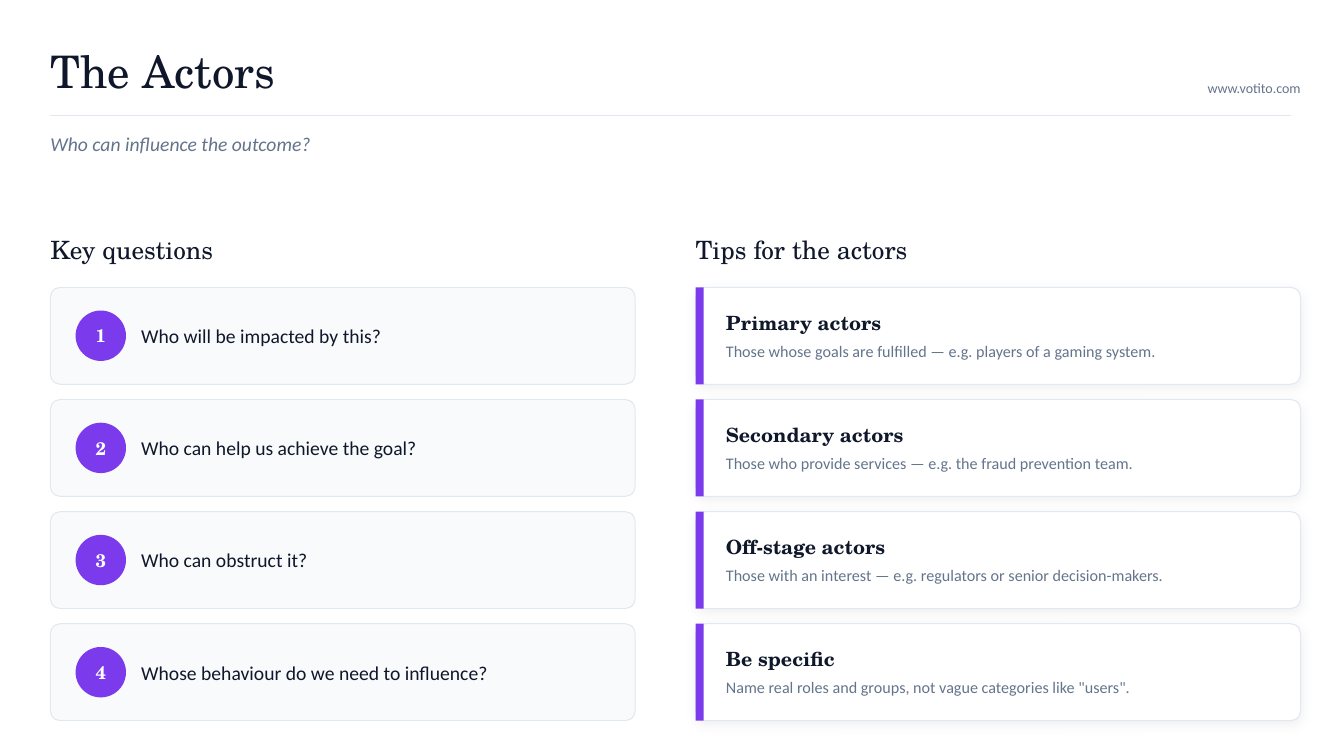
from lxml import etree
from pptx import Presentation
from pptx.dml.color import RGBColor
from pptx.enum.shapes import MSO_CONNECTOR, MSO_SHAPE
from pptx.enum.text import MSO_ANCHOR, PP_ALIGN
from pptx.oxml import parse_xml
from pptx.oxml.ns import qn
from pptx.util import Inches, Pt

RECT, ROUND, OVAL = MSO_SHAPE.RECTANGLE, MSO_SHAPE.ROUNDED_RECTANGLE, MSO_SHAPE.OVAL
LEFT, CENTER, RIGHT = PP_ALIGN.LEFT, PP_ALIGN.CENTER, PP_ALIGN.RIGHT
MIDDLE, STRAIGHT = MSO_ANCHOR.MIDDLE, MSO_CONNECTOR.STRAIGHT

TITLE = "The Actors"
SUBTITLE = "Who can influence the outcome?"
SITE = "www.votito.com"
QUESTIONS_HEADING = "Key questions"
QUESTIONS = [
    "Who will be impacted by this?",
    "Who can help us achieve the goal?",
    "Who can obstruct it?",
    "Whose behaviour do we need to influence?",
]
TIPS_HEADING = "Tips for the actors"
TIPS = [
    ("Primary actors", "Those whose goals are fulfilled — e.g. players of a gaming system."),
    ("Secondary actors", "Those who provide services — e.g. the fraud prevention team."),
    ("Off-stage actors", "Those with an interest — e.g. regulators or senior decision-makers."),
    ("Be specific", 'Name real roles and groups, not vague categories like "users".'),
]

SERIF, SANS = "TeX Gyre Schola", "Calibri"
INK, GREY, RULE, PANEL = "0F172A", "64748B", "E2E8F0", "F8FAFC"
WHITE, PURPLE = "FFFFFF", "7C3AED"

MARGIN, TIPS_X = 0.5, 6.9
QUESTION_W, TIP_W = 5.8, 6
TOP, BOTTOM, GAP = 2.85, 7.15, 0.15
PITCH = (BOTTOM + GAP - TOP) / len(QUESTIONS)
CARD_H = PITCH - GAP
RADIUS, BADGE, BAR = 0.1, 0.5, 0.08
SHADOW = ('<a:outerShdw xmlns:a="http://schemas.openxmlformats.org/drawingml/2006/main" '
          'blurRad="101600" dist="25400" dir="5400000" algn="bl" rotWithShape="0">'
          '<a:srgbClr val="000000"><a:alpha val="5000"/></a:srgbClr></a:outerShdw>')


def color(value):
    return RGBColor.from_string(value)


def write(sp, paragraphs, align=LEFT, space=0):
    tf = sp.text_frame
    tf.word_wrap = True
    tf.vertical_anchor = MIDDLE
    tf.margin_left = tf.margin_right = tf.margin_top = tf.margin_bottom = 0
    for i, runs in enumerate(paragraphs):
        p = tf.add_paragraph() if i else tf.paragraphs[0]
        p.alignment = align
        if i:
            p.space_before = Pt(space)
        for text, size, font, fill, bold, italic in runs:
            r = p.add_run()
            r.text = text
            r.font.size, r.font.name = Pt(size), font
            r.font.bold, r.font.italic = bold, italic
            r.font.color.rgb = color(fill)


def run(text, size, font, fill, bold=False, italic=False):
    return text, size, font, fill, bold, italic


def add_text(s, box, paragraphs, align=LEFT, space=0):
    sp = s.shapes.add_textbox(*map(Inches, box))
    write(sp, paragraphs, align, space)


def add_shape(s, kind, box, fill, line=None):
    sp = s.shapes.add_shape(kind, *map(Inches, box))
    sp.shadow.inherit = False
    sp.fill.solid()
    sp.fill.fore_color.rgb = color(fill)
    if line:
        sp.line.color.rgb = color(line)
        sp.line.width = Pt(0.75)
    else:
        sp.line.fill.background()
    return sp


def add_card(s, x, y, width, fill):
    sp = add_shape(s, ROUND, (x, y, width, CARD_H), fill, RULE)
    sp.adjustments[0] = RADIUS / CARD_H
    return sp


def add_header(s):
    add_text(s, (MARGIN, 0.35, 9, 0.7), [[run(TITLE, 32, SERIF, INK)]])
    add_text(s, (10.3, 0.72, 2.6, 0.3), [[run(SITE, 10, SANS, GREY)]], RIGHT)
    rule = s.shapes.add_connector(STRAIGHT, *map(Inches, (MARGIN, 1.15, 12.8, 1.15)))
    rule.line.color.rgb = color(RULE)
    rule.line.width = Pt(0.75)
    etree.SubElement(rule._element.spPr, qn("a:effectLst"))
    add_text(s, (MARGIN, 1.25, 12.3, 0.35), [[run(SUBTITLE, 14, SANS, GREY, italic=True)]])


def add_question(s, number, question, y):
    add_card(s, MARGIN, y, QUESTION_W, PANEL)
    badge = add_shape(s, OVAL, (0.75, y + (CARD_H - BADGE) / 2, BADGE, BADGE), PURPLE)
    write(badge, [[run(str(number), 13, SERIF, WHITE, True)]], CENTER)
    add_text(s, (1.4, y, 4.75, CARD_H), [[run(question, 14, SANS, INK)]])


def add_tip(s, name, detail, y):
    card = add_card(s, TIPS_X, y, TIP_W, WHITE)
    card._element.spPr.find(qn("a:effectLst")).append(parse_xml(SHADOW))
    add_shape(s, RECT, (TIPS_X, y, BAR, CARD_H), PURPLE)
    add_text(s, (TIPS_X + 0.3, y, 5.6, CARD_H),
             [[run(name, 14, SERIF, INK, True)], [run(detail, 11.5, SANS, GREY)]], space=5)


def main():
    """Build the slide on the actors and save it."""
    prs = Presentation()
    prs.slide_width, prs.slide_height = Inches(13.33), Inches(7.5)
    s = prs.slides.add_slide(prs.slide_layouts[6])
    s.background.fill.solid()
    s.background.fill.fore_color.rgb = color(WHITE)
    add_header(s)
    for heading, x, width in ((QUESTIONS_HEADING, MARGIN, QUESTION_W), (TIPS_HEADING, TIPS_X, TIP_W)):
        add_text(s, (x, 2.25, width, 0.45), [[run(heading, 18, SERIF, INK)]])
    for i, question in enumerate(QUESTIONS):
        add_question(s, i + 1, question, TOP + i * PITCH)
    for i, (name, detail) in enumerate(TIPS):
        add_tip(s, name, detail, TOP + i * PITCH)
    prs.save("out.pptx")


if __name__ == "__main__":
    main()
